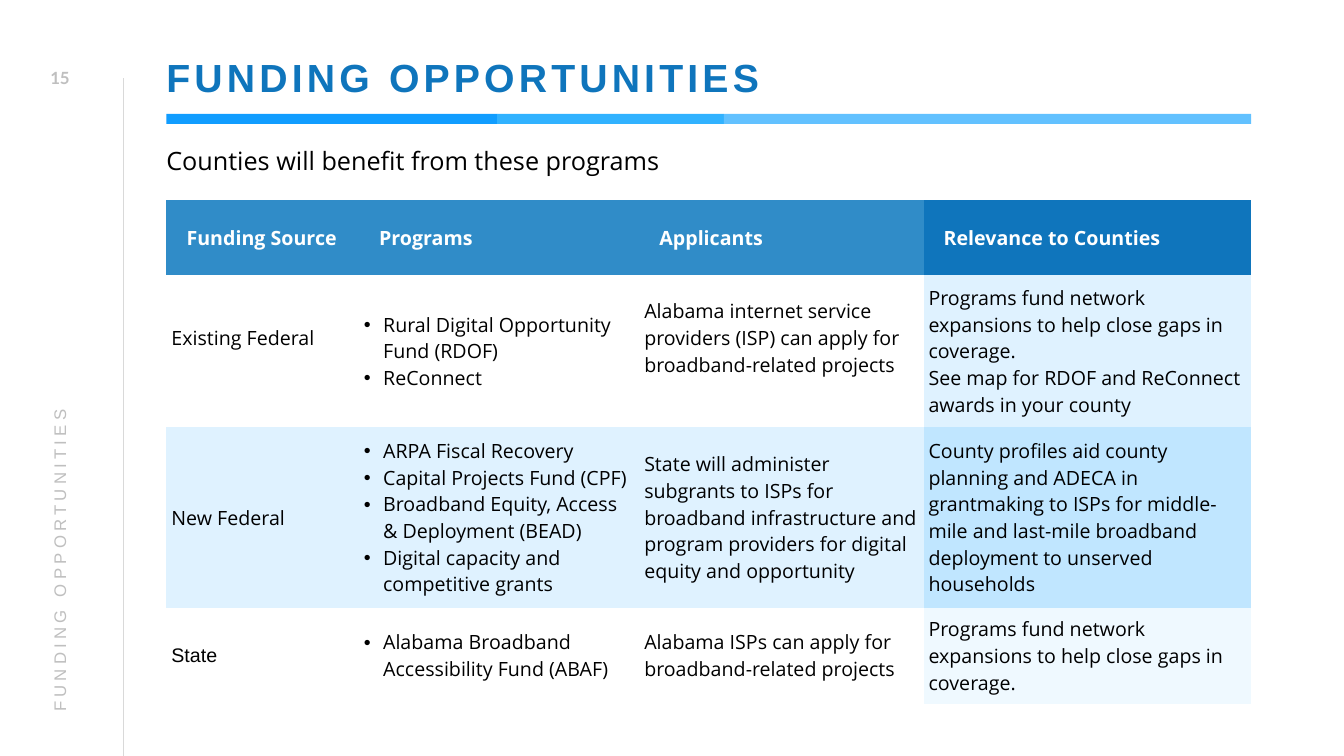
from pptx import Presentation
from pptx.dml.color import RGBColor
from pptx.enum.shapes import MSO_CONNECTOR, MSO_SHAPE
from pptx.enum.text import MSO_ANCHOR, PP_ALIGN
from pptx.oxml.ns import qn
from pptx.util import Inches, Pt
from lxml import etree

BLUE = RGBColor(0x0F, 0x75, 0xBC)
HEAD_BLUE = RGBColor(0x30, 0x8C, 0xC8)
BAR_DARK = RGBColor(0x11, 0x9D, 0xFF)
BAR_MID = RGBColor(0x31, 0xB2, 0xFF)
BAR_LIGHT = RGBColor(0x62, 0xC1, 0xFF)
PALE = RGBColor(0xDF, 0xF2, 0xFF)
PALE_STRONG = RGBColor(0xC0, 0xE6, 0xFF)
PALE_FAINT = RGBColor(0xEF, 0xF9, 0xFF)
GREY = RGBColor(0xBF, 0xBF, 0xBF)
RULE_GREY = RGBColor(0xD9, 0xD9, 0xD9)
WHITE = RGBColor(0xFF, 0xFF, 0xFF)
BLACK = RGBColor(0, 0, 0)
NO_GRID_STYLE = "{2D5ABB26-0587-4C30-8999-92F81FD0307C}"

COLUMNS = [1.91, 2.78, 2.82, 3.25]
ROWS = [0.75, 1.51, 1.79, 0.95]
BULLET_COLUMN = 1
FILLS = [(HEAD_BLUE, BLUE), (WHITE, PALE), (PALE, PALE_STRONG), (WHITE, PALE_FAINT)]
FUNDING = [
    [["Funding Source"], ["Programs"], ["Applicants"], ["Relevance to Counties"]],
    [["Existing Federal"],
     ["Rural Digital Opportunity Fund (RDOF)", "ReConnect"],
     ["Alabama internet service providers (ISP) can apply for broadband-related projects"],
     ["Programs fund network expansions to help close gaps in coverage.",
      "See map for RDOF and ReConnect awards in your county"]],
    [["New Federal"],
     ["ARPA Fiscal Recovery", "Capital Projects Fund (CPF)",
      "Broadband Equity, Access & Deployment (BEAD)",
      "Digital capacity and competitive grants"],
     ["State will administer subgrants to ISPs for broadband infrastructure and "
      "program providers for digital equity and opportunity"],
     ["County profiles aid county planning and ADECA in grantmaking to ISPs for "
      "middle-mile and last-mile broadband deployment to unserved households"]],
    [["State"],
     ["Alabama Broadband Accessibility Fund (ABAF)"],
     ["Alabama ISPs can apply for broadband-related projects"],
     ["Programs fund network expansions to help close gaps in coverage."]],
]


def style(p, font, size, color, bold=False, spacing=0):
    for r in p.runs:
        r.font.name = font
        r.font.size = Pt(size)
        r.font.bold = bold
        r.font.color.rgb = color
        if spacing:
            r.font._element.set("spc", str(spacing * 100))


def set_margins(box, left, top, right, bottom):
    box.margin_left, box.margin_top = Inches(left), Inches(top)
    box.margin_right, box.margin_bottom = Inches(right), Inches(bottom)


def add_label(s, text, x, y, w, h):
    sp = s.shapes.add_textbox(Inches(x), Inches(y), Inches(w), Inches(h))
    tf = sp.text_frame
    tf.word_wrap = True
    tf.vertical_anchor = MSO_ANCHOR.MIDDLE
    tf.text = text
    return sp


def add_sidebar(s, x, y, w, h):
    line = s.shapes.add_connector(MSO_CONNECTOR.STRAIGHT, Inches(x + w), Inches(y + h),
                                  Inches(x + w), Inches(y + 0.77))
    line.line.color.rgb = RULE_GREY
    line.line.width = Pt(0.5)
    etree.SubElement(line._element.spPr, qn("a:effectLst"))

    number = add_label(s, "15", x + 0.27, y + 0.57, 0.65, 0.4)
    p = number.text_frame.paragraphs[0]
    p.alignment = PP_ALIGN.CENTER
    style(p, "Lato", 12, GREY, bold=True)

    section = add_label(s, "FUNDING OPPORTUNITIES", x - 2.42, y + 3.95, 6.02, 0.4)
    section.rotation = 270
    style(section.text_frame.paragraphs[0], "Arial", 12, GREY, spacing=3)


def add_header(s, x, y, w):
    title = s.shapes.title
    title.left, title.top = Inches(x), Inches(y)
    title.width, title.height = Inches(w), Inches(0.74)
    tf = title.text_frame
    tf.text = "FUNDING OPPORTUNITIES"
    tf.vertical_anchor = MSO_ANCHOR.MIDDLE
    set_margins(tf, 0, 0.05, 0, 0)
    p = tf.paragraphs[0]
    p.alignment = PP_ALIGN.LEFT
    p.line_spacing = 0.9
    style(p, "Arial", 28, BLUE, bold=True, spacing=3)

    left = x
    for width, color in [(3.28, BAR_DARK), (2.25, BAR_MID), (w - 5.53, BAR_LIGHT)]:
        bar = s.shapes.add_shape(MSO_SHAPE.RECTANGLE, Inches(left), Inches(y + 0.73),
                                 Inches(width), Inches(0.1))
        bar.shadow.inherit = False
        bar.fill.solid()
        bar.fill.fore_color.rgb = color
        bar.line.fill.background()
        left += width

    subtitle = add_label(s, "Counties will benefit from these programs", x, y + 0.99, w, 0.4)
    set_margins(subtitle.text_frame, 0, 0.05, 0.1, 0.05)
    style(subtitle.text_frame.paragraphs[0], "Open Sans", 18, BLACK)


def add_bullet(p):
    pPr = p._p.get_or_add_pPr()
    pPr.set("marL", str(Inches(0.19)))
    pPr.set("indent", str(-Inches(0.19)))
    etree.SubElement(pPr, qn("a:buFont")).set("typeface", "Arial")
    etree.SubElement(pPr, qn("a:buChar")).set("char", "•")


def fill_cell(cell, row, col):
    header = row == 0
    cell.text = "\n".join(FUNDING[row][col])
    cell.vertical_anchor = MSO_ANCHOR.MIDDLE
    inset = 0.2 if header else 0.05
    raised = row == 1 and col in (0, 2)
    set_margins(cell, inset, inset, inset, 0.32 if raised else inset)
    cell.fill.solid()
    cell.fill.fore_color.rgb = FILLS[row][col == len(COLUMNS) - 1]
    font = "Arial" if FUNDING[row][col] == ["State"] else "Open Sans"
    for p in cell.text_frame.paragraphs:
        if col == BULLET_COLUMN and not header:
            add_bullet(p)
        style(p, font, 14, WHITE if header else BLACK, bold=header)


def add_funding_table(s, x, y, w, h):
    table = s.shapes.add_table(len(ROWS), len(COLUMNS), Inches(x), Inches(y),
                               Inches(w), Inches(h)).table
    table._tbl.tblPr.find(qn("a:tableStyleId")).text = NO_GRID_STYLE
    table.horz_banding = False
    for column, width in zip(table.columns, COLUMNS):
        column.width = Inches(width)
    for i, height in enumerate(ROWS):
        table.rows[i].height = Inches(height)
        for j in range(len(COLUMNS)):
            fill_cell(table.cell(i, j), i, j)


def main():
    prs = Presentation()
    prs.slide_width, prs.slide_height = Inches(13.33), Inches(7.5)
    s = prs.slides.add_slide(prs.slide_layouts[5])
    add_sidebar(s, 0, 0, 1.22, 7.5)
    add_header(s, 1.65, 0.4, 10.76)
    add_funding_table(s, 1.65, 1.98, sum(COLUMNS), sum(ROWS))
    prs.save("out.pptx")


if __name__ == "__main__":
    main()
